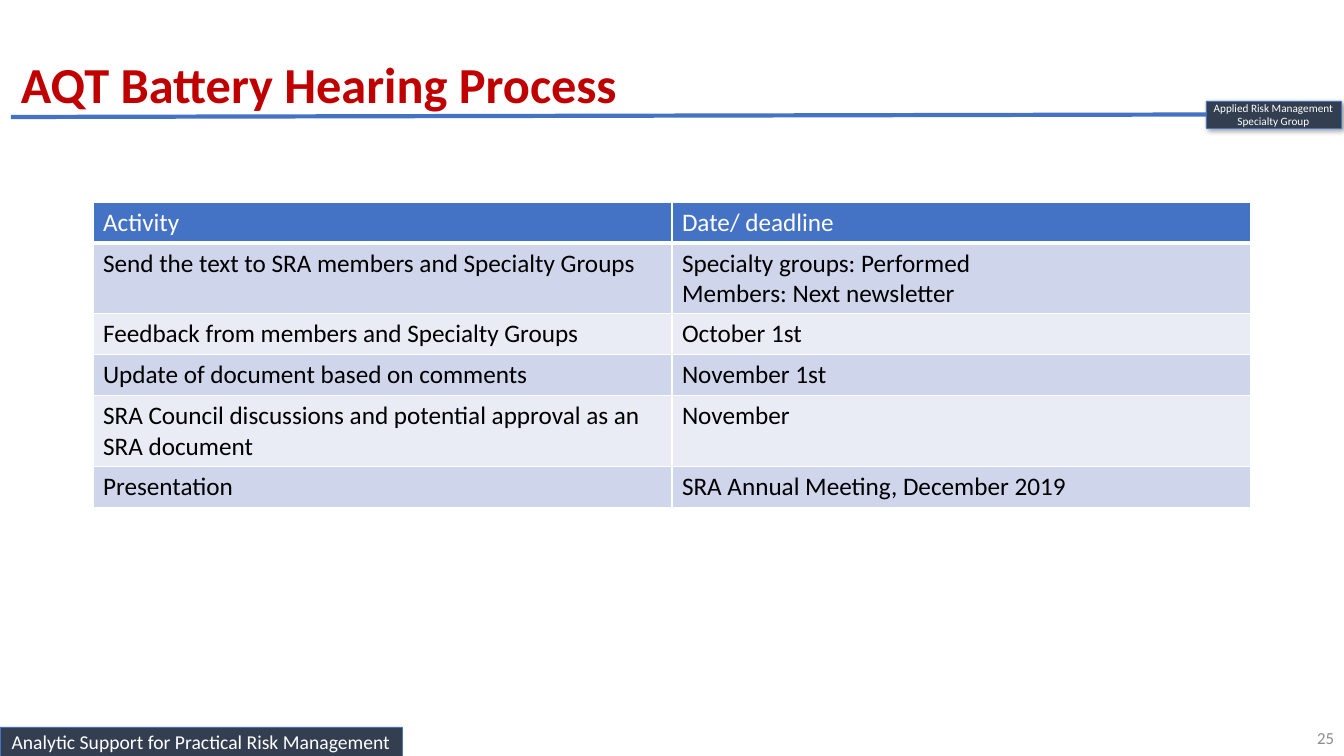
from lxml.etree import SubElement
from pptx import Presentation
from pptx.dml.color import RGBColor
from pptx.enum.shapes import MSO_CONNECTOR, MSO_SHAPE
from pptx.enum.text import MSO_ANCHOR, MSO_AUTO_SIZE, PP_ALIGN
from pptx.oxml.ns import qn
from pptx.util import Emu, Pt

EMU_PER_PX = 914400 / 100.8
FONT = "Calibri"
WHITE = RGBColor(0xFF, 0xFF, 0xFF)
BLACK = RGBColor(0x00, 0x00, 0x00)
RED = RGBColor(0xC0, 0x00, 0x00)
BLUE = RGBColor(0x44, 0x72, 0xC4)
SLATE = RGBColor(0x33, 0x3F, 0x50)
GRAY = RGBColor(0x8C, 0x8C, 0x8C)
BAND_DARK = RGBColor(0xCF, 0xD5, 0xEA)
BAND_LIGHT = RGBColor(0xE9, 0xEB, 0xF5)

SCHEDULE = [
    ("Activity", "Date/ deadline"),
    ("Send the text to SRA members and Specialty Groups",
     "Specialty groups: Performed\nMembers: Next newsletter"),
    ("Feedback from members and Specialty Groups", "October 1st"),
    ("Update of document based on comments", "November 1st"),
    ("SRA Council discussions and potential approval as an SRA document", "November"),
    ("Presentation", "SRA Annual Meeting, December 2019"),
]


def px(length):
    return Emu(round(length * EMU_PER_PX))


def write_text(text_frame, text, size=18, color=BLACK, bold=False, align=PP_ALIGN.LEFT):
    for index, line in enumerate(text.split("\n")):
        paragraph = text_frame.paragraphs[0] if index == 0 else text_frame.add_paragraph()
        paragraph.alignment = align
        run = paragraph.add_run()
        run.text = line
        run.font.name = FONT
        run.font.size = Pt(size)
        run.font.bold = bold
        run.font.color.rgb = color


def add_label_box(slide, left, top, width, height, text, size, inset_x, inset_y):
    shape = slide.shapes.add_shape(
        MSO_SHAPE.RECTANGLE, px(left), px(top), px(width), px(height))
    shape.shadow.inherit = False
    shape.fill.solid()
    shape.fill.fore_color.rgb = SLATE
    shape.line.color.rgb = BLUE
    shape.line.width = Pt(0.5)
    text_frame = shape.text_frame
    text_frame.word_wrap = True
    text_frame.vertical_anchor = MSO_ANCHOR.MIDDLE
    text_frame.margin_left = text_frame.margin_right = px(inset_x)
    text_frame.margin_top = text_frame.margin_bottom = px(inset_y)
    write_text(text_frame, text, size=size, color=WHITE, align=PP_ALIGN.CENTER)
    return shape


def add_drop_shadow(shape):
    effects = shape._element.spPr.find(qn("a:effectLst"))
    shadow = SubElement(effects, qn("a:outerShdw"), blurRad=str(Pt(4)),
                        dist=str(Pt(3)), dir="2700000", algn="tl", rotWithShape="0")
    color = SubElement(shadow, qn("a:srgbClr"), val=str(BLACK))
    SubElement(color, qn("a:alpha"), val="40000")


def add_text_box(slide, left, top, width, height, text, wrap=True,
                 anchor=MSO_ANCHOR.TOP, **text_format):
    text_frame = slide.shapes.add_textbox(
        px(left), px(top), px(width), px(height)).text_frame
    text_frame.word_wrap = wrap
    text_frame.vertical_anchor = anchor
    if not wrap:
        text_frame.auto_size = MSO_AUTO_SIZE.SHAPE_TO_FIT_TEXT
    write_text(text_frame, text, **text_format)


def add_title_rule(slide, left, top, badge):
    connector = slide.shapes.add_connector(
        MSO_CONNECTOR.STRAIGHT, px(left), px(top), badge.left, badge.top + badge.height // 2)
    connector.end_connect(badge, 1)
    connector.line.color.rgb = BLUE
    connector.line.width = Pt(3)
    SubElement(connector._element.spPr, qn("a:effectLst"))


def set_cell_borders(cell, bottom_width):
    properties = cell._tc.get_or_add_tcPr()
    widths = {"a:lnL": 1, "a:lnR": 1, "a:lnT": 1, "a:lnB": bottom_width}
    for position, (tag, width) in enumerate(widths.items()):
        border = SubElement(properties, qn(tag), w=str(Pt(width)))
        fill = SubElement(border, qn("a:solidFill"))
        SubElement(fill, qn("a:srgbClr"), val=str(WHITE))
        properties.insert(position, border)


def add_schedule_table(slide, left, top, column_width, row_height, rows):
    column_count = len(rows[0])
    table = slide.shapes.add_table(
        len(rows), column_count, px(left), px(top),
        px(column_width * column_count), px(row_height * len(rows))).table
    for column in table.columns:
        column.width = px(column_width)
    for row_index, row in enumerate(rows):
        is_header = row_index == 0
        band = BAND_DARK if row_index % 2 else BAND_LIGHT
        table.rows[row_index].height = px(row_height)
        for column_index, text in enumerate(row):
            cell = table.cell(row_index, column_index)
            cell.fill.solid()
            cell.fill.fore_color.rgb = BLUE if is_header else band
            write_text(cell.text_frame, text, color=WHITE if is_header else BLACK)
            set_cell_borders(cell, bottom_width=3 if is_header else 1)


def main():
    presentation = Presentation()
    presentation.slide_width = px(1344)
    presentation.slide_height = px(756)
    slide = presentation.slides.add_slide(presentation.slide_layouts[6])

    add_label_box(slide, 0, 727, 402, 29, "Analytic Support for Practical Risk Management",
                  size=14, inset_x=10, inset_y=1)
    add_text_box(slide, 1276, 718, 68, 40, "25", anchor=MSO_ANCHOR.MIDDLE,
                 size=12, color=GRAY, align=PP_ALIGN.RIGHT)
    add_schedule_table(slide, 93, 202, 579, 41, SCHEDULE)
    badge = add_label_box(slide, 1206, 101, 135, 27,
                          "Applied Risk Management\nSpecialty Group",
                          size=8, inset_x=5, inset_y=5)
    add_drop_shadow(badge)
    add_title_rule(slide, 11, 117, badge)
    add_text_box(slide, 11, 48, 624, 72, "AQT Battery Hearing Process", wrap=False,
                 size=36, color=RED, bold=True)

    presentation.save("out.pptx")


if __name__ == "__main__":
    main()
